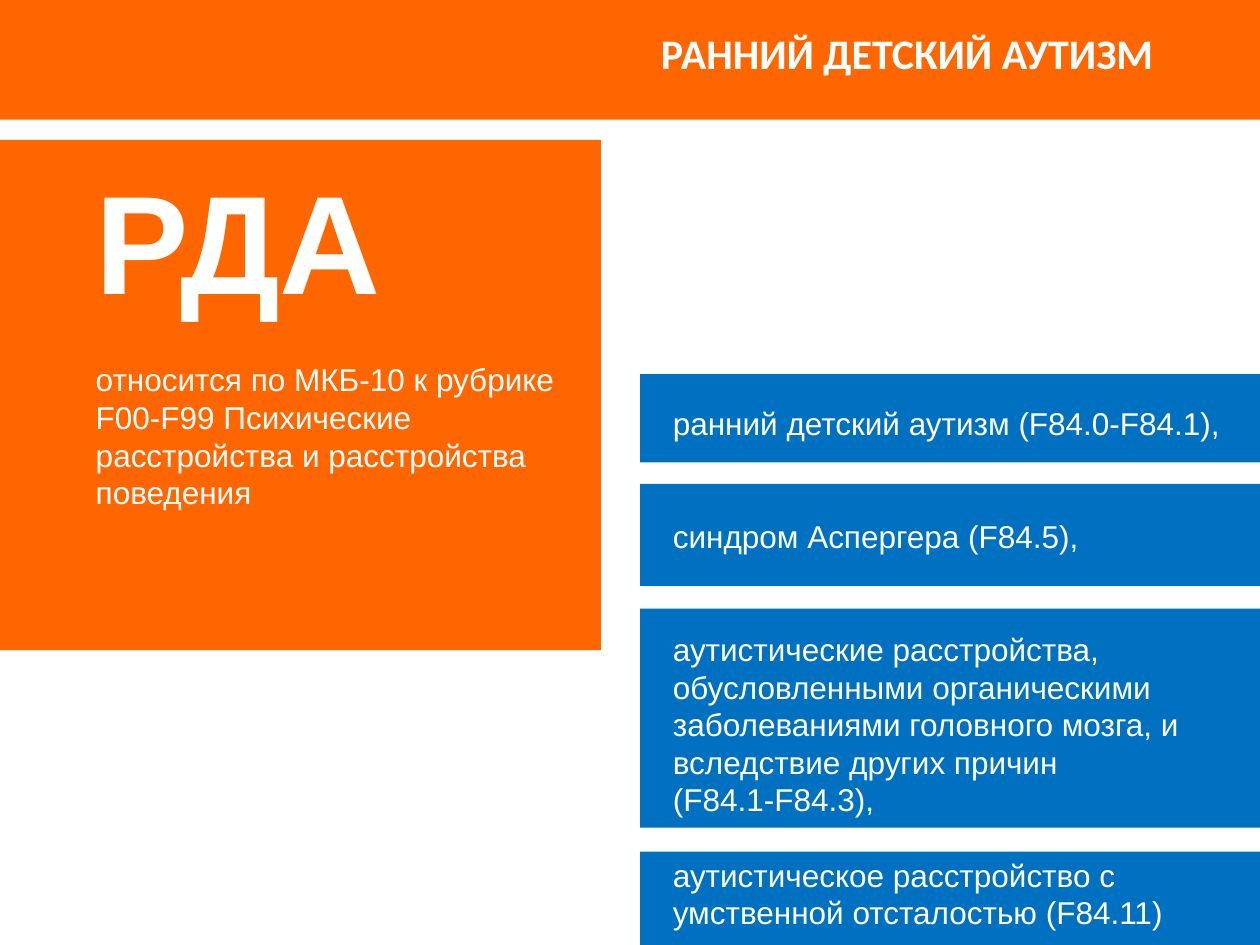
from pptx import Presentation
from pptx.dml.color import RGBColor as Rgb
from pptx.enum.shapes import MSO_SHAPE as Kind
from pptx.enum.text import MSO_ANCHOR as Anchor, MSO_AUTO_SIZE as Fit, PP_ALIGN as Align
from pptx.util import Inches, Pt

TITLE = "РАННИЙ ДЕТСКИЙ АУТИЗМ "
LEAD = "РДА"
ABOUT = ("относится по МКБ-10 к рубрике F00-F99 Психические "
         "расстройства и расстройства поведения")
# wording, space before in lines
ITEMS = [
    ("ранний детский аутизм (F84.0-F84.1),", 0),
    ("синдром Аспергера (F84.5),", 2),
    ("аутистические расстройства, обусловленными органическими "
     "заболеваниями головного мозга, и вследствие других причин \n(F84.1-F84.3),", 2),
    ("аутистическое расстройство с умственной отсталостью (F84.11)", 1),
]
BARS = [(2.97, 0.7), (3.84, 0.81), (4.83, 1.74), (6.76, 0.74)]  # top, height
BAR_LEFT, BAR_WIDTH = 5.08, 4.92

THEME = {
    "orange": Rgb(0xFF, 0x66, 0x00), "blue": Rgb(0x00, 0x70, 0xC0),
    "white": Rgb(0xFF, 0xFF, 0xFF),
    "head": "Calibri", "text": "Arial",
    "title": 24, "lead": 80, "body": 18, "line": 21.5,
}


def block(slide, box, color):
    """Add a plain rectangle behind the text."""
    rect = slide.shapes.add_shape(Kind.RECTANGLE, *map(Inches, box))
    rect.shadow.inherit = False
    rect.fill.solid()
    rect.fill.fore_color.rgb = THEME[color]
    rect.line.fill.background()
    slide.shapes._spTree.insert(2, rect._element)


def place(holder, box):
    holder.left, holder.top, holder.width, holder.height = map(Inches, box)
    frame = holder.text_frame
    frame.word_wrap = True
    frame.auto_size = Fit.NONE
    frame.vertical_anchor = Anchor.TOP
    return frame


def write(para, text, size, font="text", bold=False, before=0, line=None):
    """Fill a paragraph without a bullet; a newline becomes a line break."""
    props = para._p.get_or_add_pPr()
    props.set("marL", "0")
    props.set("indent", "0")
    para.space_before, para.space_after = Pt(before), Pt(0)
    para.line_spacing = Pt(line) if line else 1.0
    props.insert_element_before(
        props.makeelement(props.tag.replace("pPr", "buNone"), {}),
        "a:tabLst", "a:defRPr", "a:extLst")
    for i, part in enumerate(text.split("\n")):
        if i:
            para.add_line_break()
        run = para.add_run()
        run.text = part
        run.font.size = Pt(THEME[size])
        run.font.name = THEME[font]
        run.font.bold = bold
        run.font.color.rgb = THEME["white"]


def main():
    deck = Presentation()
    deck.slide_width, deck.slide_height = Inches(10), Inches(7.5)
    slide = deck.slides.add_slide(deck.slide_layouts[3])
    title, left, right = list(slide.placeholders)[:3]

    block(slide, (0, 0, 10, 0.95), "orange")
    block(slide, (-0.01, 1.11, 4.78, 4.05), "orange")
    for top, height in BARS:
        block(slide, (BAR_LEFT, top, BAR_WIDTH, height), "blue")

    para = place(title, (1.64, 0.17, 7.69, 0.5)).paragraphs[0]
    write(para, TITLE, "title", "head", bold=True)
    para.alignment = Align.RIGHT

    line = THEME["line"]
    frame = place(left, (0.66, 1.18, 3.95, 2.96))
    write(frame.paragraphs[0], LEAD, "lead", bold=True)
    write(frame.add_paragraph(), ABOUT, "body", before=line, line=line)

    frame = place(right, (5.24, 3.16, 4.76, 4.34))
    for i, (text, gap) in enumerate(ITEMS):
        para = frame.add_paragraph() if i else frame.paragraphs[0]
        write(para, text, "body", before=gap * line, line=line)

    deck.save("out.pptx")


if __name__ == "__main__":
    main()
